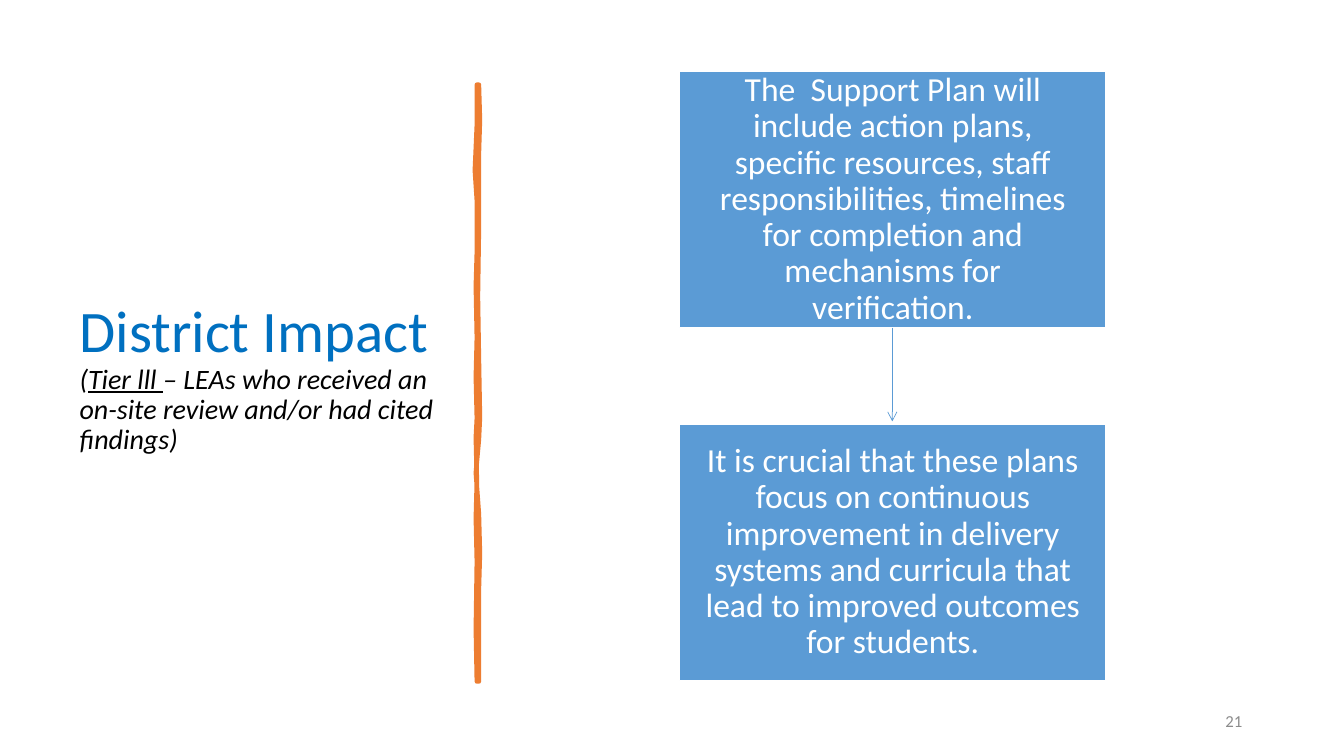
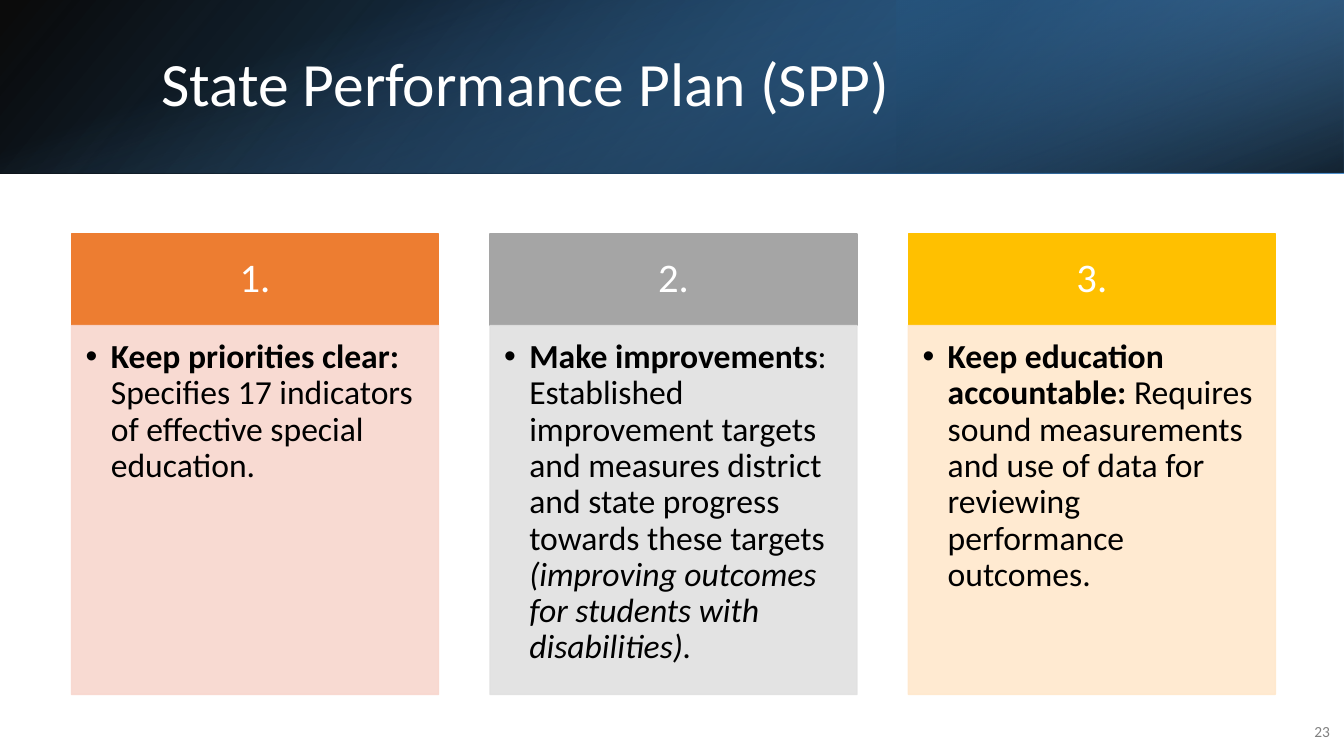
from lxml.etree import SubElement
from pptx import Presentation
from pptx.dml.color import RGBColor
from pptx.enum.shapes import MSO_CONNECTOR as CONN, MSO_SHAPE as SHAPE
from pptx.enum.text import MSO_ANCHOR as ANCHOR, PP_ALIGN as ALIGN
from pptx.oxml.ns import qn
from pptx.util import Pt

PX = 9144  # 100 px to the inch
FONT = "Calibri"
COLORS = {
    "black": "000000", "white": "FFFFFF", "title": "0070C0",
    "box": "5B9BD5", "navy": "1F4E79", "blue": "2E75B6",
    "orange": "ED7D31", "gray": "A5A5A5", "gold": "FFC000",
    "orange_tint": "F8D7CE", "gray_tint": "E1E1E1", "gold_tint": "FFE8CC",
    "number_mid": "8C8C8C", "number_dark": "808080",
}
INSETS = (10, 5, 10, 5)


def px(*lengths):
    return [n * PX for n in lengths]


def rgb(name):
    return RGBColor.from_string(COLORS[name])


def add_alpha(color, percent):
    SubElement(color, qn("a:alpha"), val=str(percent * 1000))


def write(tf, runs, size=24, color="black", align=ALIGN.LEFT,
          anchor=ANCHOR.MIDDLE, insets=INSETS, spacing=0.9, bullet=False):
    """Fill a text frame with one paragraph of (text, format) runs."""
    tf.word_wrap = True
    tf.vertical_anchor = anchor
    tf.margin_left, tf.margin_top, tf.margin_right, tf.margin_bottom = px(*insets)
    p = tf.paragraphs[0]
    p.alignment = align
    p.line_spacing = spacing
    if bullet:
        pPr = p._p.get_or_add_pPr()
        pPr.set("marL", str(25 * PX))
        pPr.set("indent", str(-25 * PX))
        SubElement(pPr, qn("a:buFont"), typeface="Arial")
        SubElement(pPr, qn("a:buChar"), char="•")
    for text, fmt in runs:
        if text == "\n":
            p.add_line_break()
            continue
        r = p.add_run()
        r.text = text
        font = r.font
        font.name = FONT
        font.size = Pt(fmt.get("size", size))
        font.color.rgb = rgb(fmt.get("color", color))
        font.bold = fmt.get("bold", False)
        font.italic = fmt.get("italic", False)
        font.underline = fmt.get("underline", False)


def add_text(s, box, runs, **fmt):
    write(s.shapes.add_textbox(*px(*box)).text_frame, runs, **fmt)


def add_rect(s, box, fill, line, alpha=100):
    sp = s.shapes.add_shape(SHAPE.RECTANGLE, *px(*box))
    sp.shadow.inherit = False
    sp.fill.solid()
    sp.fill.fore_color.rgb = rgb(fill)
    sp.line.color.rgb = rgb(line)
    sp.line.width = Pt(1)
    if alpha < 100:
        for color in list(sp._element.spPr.iter(qn("a:srgbClr"))):
            add_alpha(color, alpha)
    return sp


def add_gradient(s, box, stops, angle, rotation=0, flip=False):
    """Add a borderless rectangle with (position, colour, opacity) stops."""
    sp = s.shapes.add_shape(SHAPE.RECTANGLE, *px(*box))
    sp.shadow.inherit = False
    sp.rotation = rotation
    sp.line.fill.background()
    spPr = sp._element.spPr
    if flip:
        spPr.xfrm.set("flipH", "1")
    grad = SubElement(spPr, qn("a:gradFill"), rotWithShape="1")
    spPr.find(qn("a:prstGeom")).addnext(grad)
    gs_list = SubElement(grad, qn("a:gsLst"))
    for position, name, opacity in stops:
        gs = SubElement(gs_list, qn("a:gs"), pos=str(position * 1000))
        add_alpha(SubElement(gs, qn("a:srgbClr"), val=COLORS[name]), opacity)
    SubElement(grad, qn("a:lin"), ang=str(angle * 60000), scaled="0")


def add_number(s, box, number, size, color):
    add_text(s, box, [(number, {})], size=size, color=color,
             align=ALIGN.RIGHT, spacing=1.0)


def add_brush_rule(s, x, y):
    """Draw the uneven vertical stroke down from its top left corner."""
    right = [(5, 0), (6, 35), (5, 68), (5, 142), (4, 210), (5, 272), (6, 330),
             (5, 352), (2, 385), (5, 426), (6, 465), (5, 500), (5, 592)]
    left = [(3, 592), (2, 540), (3, 473), (2, 430), (3, 393), (2, 350),
            (3, 331), (2, 290), (3, 251), (2, 200), (3, 166), (3, 115),
            (1, 85), (3, 40), (3, 0)]
    fb = s.shapes.build_freeform(*right[0], scale=PX)
    fb.add_line_segments(right[1:] + left, close=True)
    sp = fb.convert_to_shape(*px(x, y))
    sp.shadow.inherit = False
    sp.fill.solid()
    sp.fill.fore_color.rgb = rgb("orange")
    sp.line.color.rgb = rgb("orange")
    sp.line.width = Pt(3.25)
    SubElement(sp.line._ln, qn("a:round"))


def add_arrow(s, x, top, bottom):
    c = s.shapes.add_connector(CONN.STRAIGHT, *px(x, top, x, bottom))
    c.line.color.rgb = rgb("box")
    c.line.width = Pt(0.5)
    SubElement(c.line._ln, qn("a:tailEnd"), type="arrow")
    SubElement(c._element.spPr, qn("a:effectLst"))


def add_flow(s, box, texts, gap):
    """Stack equal boxes in the given area, joined by arrows."""
    x, y, w, h = box
    step_h = (h - gap * (len(texts) - 1)) // len(texts)
    for i, text in enumerate(texts):
        top = y + i * (step_h + gap)
        if i:
            add_arrow(s, x + w // 2, top - gap, top - 3)
        sp = add_rect(s, (x, top, w, step_h), "box", "white")
        write(sp.text_frame, [(text, {})], color="white", align=ALIGN.CENTER,
              insets=(21, 22, 21, 22))


def add_column(s, box, heading, runs, color):
    x, y, w, h = box
    head_h = 91
    head = add_rect(s, (x, y, w, head_h), color, color)
    write(head.text_frame, [(heading, {})], size=29, color="white",
          align=ALIGN.CENTER, insets=(23, 13, 23, 13))
    tint = color + "_tint"
    body = add_rect(s, (x, y + head_h, w, h - head_h), tint, tint, alpha=90)
    write(body.text_frame, runs, anchor=ANCHOR.TOP,
          insets=(14, 14, 19, 21), bullet=True)


def add_columns(s, box, columns, gap):
    x, y, w, h = box
    col_w = (w - gap * (len(columns) - 1)) // len(columns)
    for i, (color, runs) in enumerate(columns):
        add_column(s, (x + i * (col_w + gap), y, col_w, h),
                   f"{i + 1}.", runs, color)


def add_banner(s, w, h):
    add_gradient(s, (0, 0, w, h), [(0, "black", 96), (100, "blue", 100)],
                 140, flip=True)
    add_gradient(s, (w - 444, 0, 444, h), [(19, "navy", 68), (100, "box", 79)],
                 320, rotation=180, flip=True)
    # Turned a quarter, so its width and height swap about the banner centre
    add_gradient(s, ((w - h) // 2, (h - w) // 2, h, w),
                 [(23, "box", 0), (99, "black", 74)], 340, rotation=90)


def impact_slide(s):
    note = {"size": 20, "color": "black", "italic": True}
    add_text(s, (69, 70, 385, 611), [
        ("District Impact", {}),
        ("\n", {}),
        ("(", note),
        ("Tier lll ", {**note, "underline": True}),
        ("– LEAs who received an on-site review and/or had cited findings)", note),
    ], size=42, color="title")
    add_brush_rule(s, 470, 84)
    add_number(s, (942, 695, 300, 40), "21", 12, "number_mid")
    add_flow(s, (674, 71, 423, 604), [
        "The  Support Plan will include action plans, specific resources, staff "
        "responsibilities, timelines for completion and mechanisms for verification.",
        "It is crucial that these plans focus on continuous improvement in delivery "
        "systems and curricula that lead to improved outcomes for students.",
    ], gap=96)


def plan_slide(s):
    bold, plain, italic = {"bold": True}, {}, {"italic": True}
    add_banner(s, 1333, 172)
    add_text(s, (150, 38, 1098, 96), [("State Performance Plan (SPP)", {})],
             size=44, color="white")
    add_number(s, (1280, 706, 49, 40), "23", 11, "number_dark")
    add_columns(s, (71, 232, 1194, 457), [
        ("orange", [
            ("Keep priorities clear: ", bold),
            ("Specifies 17 indicators of effective special education.", plain)]),
        ("gray", [
            ("Make improvements", bold),
            (": Established improvement targets and measures district and state "
             "progress towards these targets ", plain),
            ("(improving outcomes for students with disabilities).", italic)]),
        ("gold", [
            ("Keep education accountable: ", bold),
            ("Requires sound measurements and use of data for reviewing "
             "performance outcomes.", plain)]),
    ], gap=51)


def main():
    prs = Presentation()
    prs.slide_width, prs.slide_height = px(1333, 750)
    for build in (impact_slide, plan_slide):
        build(prs.slides.add_slide(prs.slide_layouts[6]))
    prs.save("out.pptx")


if __name__ == "__main__":
    main()
